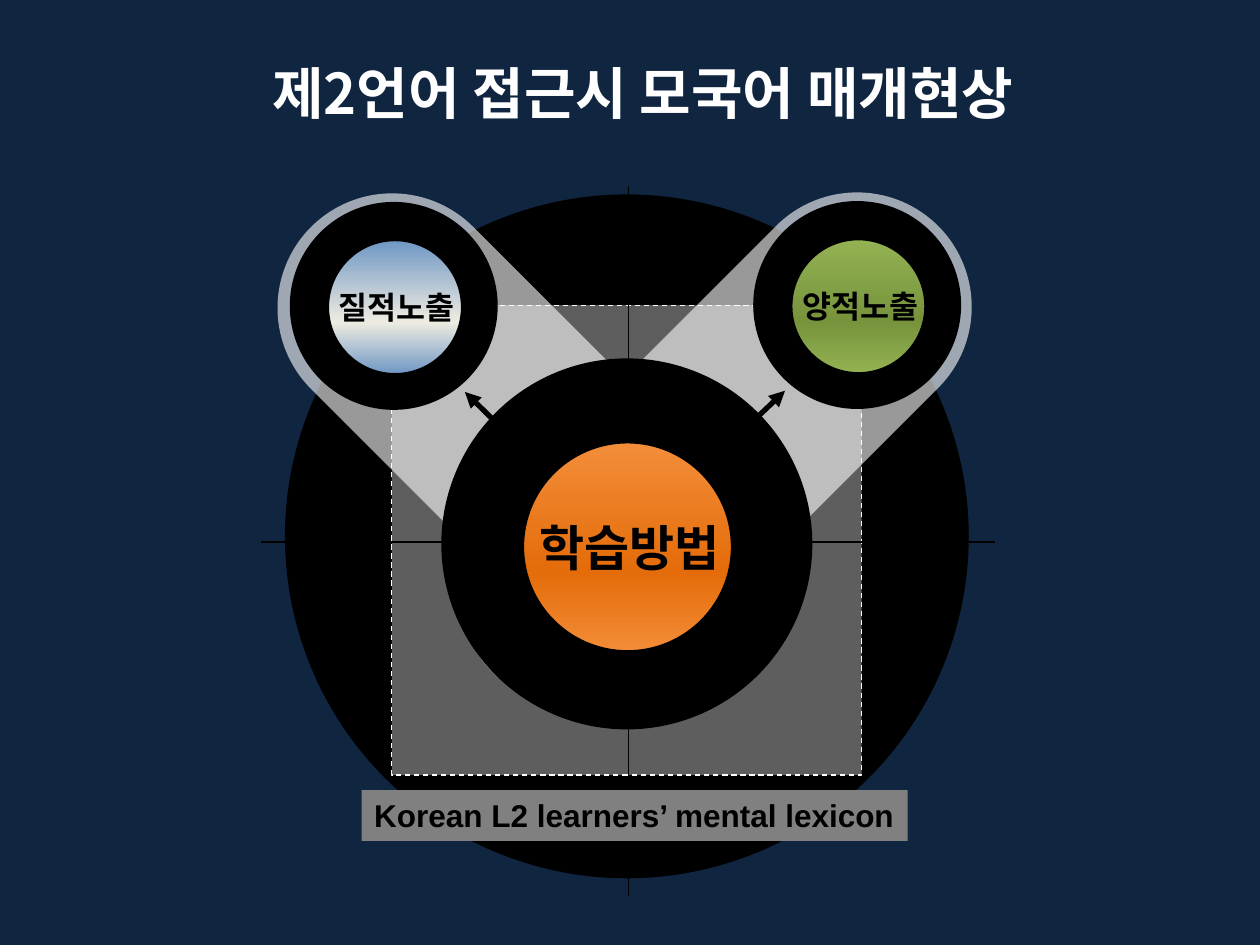
from copy import deepcopy

from lxml import etree
from pptx import Presentation
from pptx.dml.color import RGBColor
from pptx.enum import dml, shapes, text
from pptx.oxml.ns import qn
from pptx.util import Pt

COLORS = {
    "navy": "10253F", "black": "000000", "white": "FFFFFF", "gray": "808080",
    "blue": "4F81BD", "cream": "EEECE1", "green": "9BBB59", "moss": "77933C",
    "orange": "F79646", "rust": "E46C0A",
}
KOREAN = "Noto Sans CJK KR"
LATIN = "Arial"
SHAPE = shapes.MSO_SHAPE


def rgb(name):
    return RGBColor.from_string(COLORS[name])


def add_figure(parent, kind, box, fill, line=None, width=1, alpha=None):
    figure = parent.add_shape(kind, *map(Pt, box))
    figure.shadow.inherit = False
    figure.fill.solid()
    figure.fill.fore_color.rgb = rgb(fill)
    if alpha:
        color = figure._element.spPr.find(qn("a:solidFill"))[0]
        etree.SubElement(color, qn("a:alpha"), val=str(alpha * 1000))
    if line:
        figure.line.color.rgb = rgb(line)
        figure.line.width = Pt(width)
    else:
        figure.line.fill.background()
    return figure


def around(cx, cy, width, height):
    return cx - width / 2, cy - height / 2, width, height


def shade(figure, edge, middle):
    figure.fill.gradient()
    figure.fill.gradient_angle = 270
    stop_list = figure._element.spPr.find(qn("a:gradFill")).find(qn("a:gsLst"))
    stop_list.append(deepcopy(stop_list[0]))
    stops = zip(figure.fill.gradient_stops, (0, 0.61, 1), (edge, middle, edge))
    for stop, position, color in stops:
        stop.position = position
        stop.color.rgb = rgb(color)


def write(frame, words, size, font, color, align):
    frame.text = words
    paragraph = frame.paragraphs[0]
    paragraph.alignment = align
    run_font = paragraph.runs[0].font
    run_font.size, run_font.bold, run_font.name = Pt(size), True, font
    run_font.color.rgb = rgb(color)
    etree.SubElement(run_font._element, qn("a:ea"), typeface=KOREAN)


def add_label(parent, box, words, size, font, align=text.PP_ALIGN.CENTER):
    label = parent.add_textbox(*map(Pt, box))
    label.text_frame.word_wrap = True
    write(label.text_frame, words, size, font, "black", align)
    return label


def add_line(parent, start, end, width, arrows=False):
    line = parent.add_connector(shapes.MSO_CONNECTOR.STRAIGHT, *map(Pt, start + end))
    line.line.color.rgb = rgb("black")
    line.line.width = Pt(width)
    properties = line._element.spPr
    if arrows:
        for tip in ("a:headEnd", "a:tailEnd"):
            etree.SubElement(properties.find(qn("a:ln")), qn(tip), type="triangle")
    etree.SubElement(properties, qn("a:effectLst"))


def add_title(slide, box):
    title = slide.shapes.title
    title.left, title.top, title.width, title.height = map(Pt, box)
    frame = title.text_frame
    frame.margin_left = Pt(20)
    frame.vertical_anchor = text.MSO_ANCHOR.MIDDLE
    write(frame, "제2언어 접근시 모국어 매개현상", 32, KOREAN, "white",
          text.PP_ALIGN.CENTER)


def add_badge(parent, cx, cy, face_size, ring_size, label_size, edge, middle,
              words, size, font):
    face = add_figure(parent, SHAPE.OVAL,
                      around(cx - 1.4, cy - 2, face_size, face_size), edge)
    shade(face, edge, middle)
    ring = add_figure(parent, SHAPE.DONUT,
                      around(cx, cy, ring_size, ring_size), "black", "black")
    ring.adjustments[0] = 0.124
    add_label(parent, around(cx + 1, cy, *label_size), words, size, font)


def add_exposure(slide, cx, cy, edge, middle, words):
    group = slide.shapes.add_group_shape().shapes
    add_figure(group, SHAPE.OVAL, around(cx - 0.7, cy - 0.7, 118.8, 118.8), "black")
    add_badge(group, cx, cy, 95.8, 101.5, (130, 29), edge, middle, words, 18, LATIN)


def add_lexicon(slide, left, top, size):
    parts = slide.shapes
    cx, cy = left + size / 2, top + size / 2
    add_figure(parts, SHAPE.OVAL, (left, top, size, size), "black", "black", 9.75)
    square = add_figure(parts, SHAPE.RECTANGLE, around(cx, cy + 2.2, 268.5, 268.5),
                        "white", "white", 0.75, 37)
    square.line.dash_style = dml.MSO_LINE.DASH
    for dx, dy, angle in ((-53, -49.4, 45), (50.5, -50, 315)):
        beam = add_figure(parts, SHAPE.ROUNDED_RECTANGLE,
                          around(cx + dx, cy + dy, 360.4, 131), "white", alpha=60)
        beam.adjustments[0] = 0.5
        beam.rotation = angle
    add_figure(parts, SHAPE.OVAL, around(cx, cy + 4.3, 211, 211), "black", "black")
    add_line(parts, (cx - 77.4, cy + 76.6), (cx + 90.4, cy - 83.2), 3, True)
    add_line(parts, (cx - 92.5, cy - 82.5), (cx + 69.5, cy + 76.6), 3, True)
    add_line(parts, (cx - 209.2, cy + 3.2), (cx + 210.6, cy + 3.2), 0.75)
    add_line(parts, (cx + 1, cy - 200), (cx + 1, cy + 205.4), 0.75)
    add_exposure(slide, cx - 132.5, cy - 131, "blue", "cream", "질적노출")
    add_exposure(slide, cx + 132.3, cy - 131.5, "green", "moss", "양적노출")
    add_badge(parts, cx + 0.4, cy + 6, 150, 158.4, (202, 41), "orange", "rust",
              "학습방법", 28, KOREAN)
    caption = add_label(parts, (cx - 151.5, cy + 145, 312, 29),
                        "Korean L2 learners’ mental lexicon", 18, LATIN,
                        text.PP_ALIGN.LEFT)
    caption.fill.solid()
    caption.fill.fore_color.rgb = rgb("gray")


def main():
    deck = Presentation()
    deck.slide_width, deck.slide_height = Pt(720), Pt(540)
    slide = deck.slides.add_slide(deck.slide_layouts[5])
    slide.background.fill.solid()
    slide.background.fill.fore_color.rgb = rgb("navy")
    add_title(slide, (2, 15, 718, 75))
    add_lexicon(slide, 167.7, 116, 381)
    deck.save("out.pptx")


if __name__ == "__main__":
    main()
